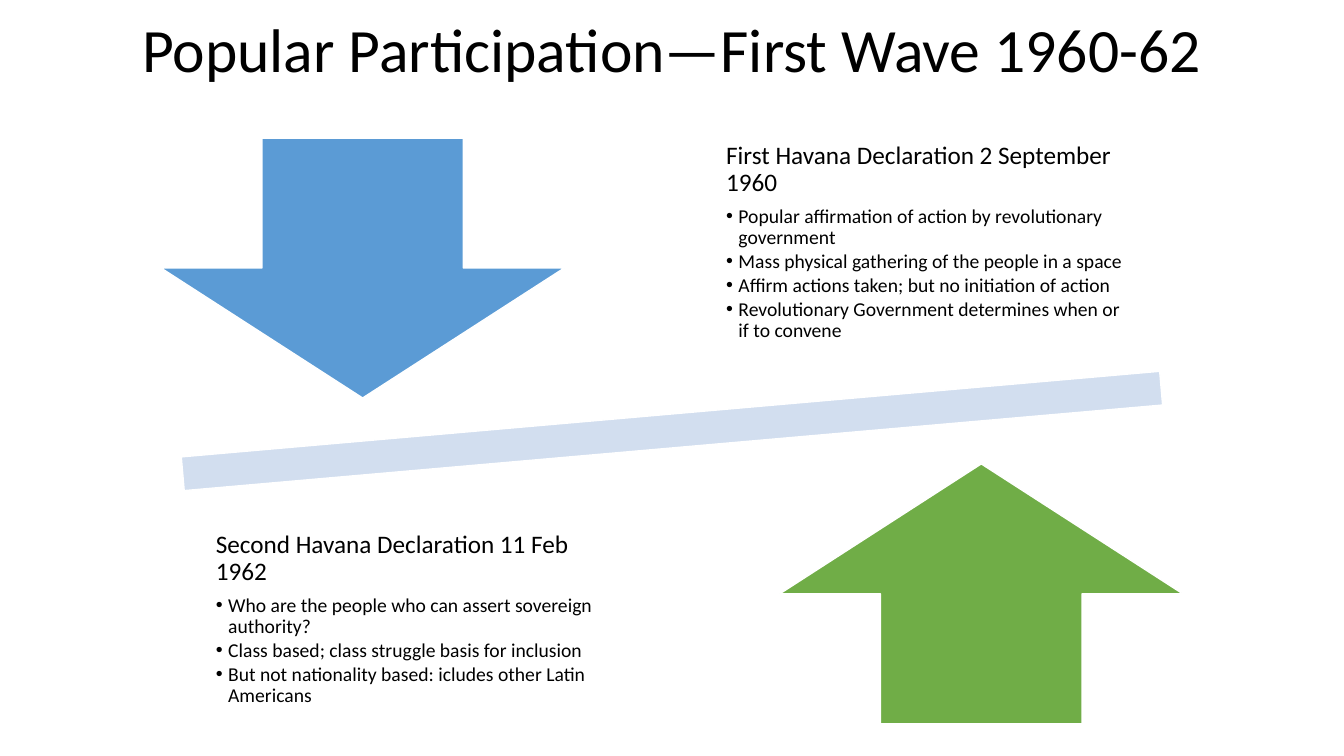
from lxml.etree import SubElement
from pptx import Presentation
from pptx.dml.color import RGBColor
from pptx.enum.shapes import MSO_SHAPE
from pptx.enum.text import MSO_ANCHOR, MSO_AUTO_SIZE, PP_ALIGN
from pptx.oxml.ns import qn
from pptx.util import Cm, Pt

SLIDE_WIDTH, SLIDE_HEIGHT = 33.87, 19.05
TITLE_HEIGHT = 2.67
ARROW_SIZE = (10.16, 6.55)
ARROW_MARGINS = (4.06, 0.81)
TEXT_SIZE = (10.85, 6.88)
TEXT_MARGIN = 5.08
BAR_SIZE = (33.68, 3.63)
BULLET_INDENT = 0.31

FIRST_DECLARATION = (
    "First Havana Declaration 2 September 1960",
    [
        "Popular affirmation of action by revolutionary government",
        "Mass physical gathering of the people in a space",
        "Affirm actions taken; but no initiation of action",
        "Revolutionary Government determines when or if to convene",
    ],
)
SECOND_DECLARATION = (
    "Second Havana Declaration 11 Feb 1962",
    [
        "Who are the people who can assert sovereign authority?",
        "Class based; class struggle basis for inclusion",
        "But not nationality based: icludes other Latin Americans",
    ],
)


def color(hex_string):
    return RGBColor.from_string(hex_string)


def place(shape, left, top, width, height):
    shape.left, shape.top = Cm(left), Cm(top)
    shape.width, shape.height = Cm(width), Cm(height)


def format_paragraph(paragraph, size, space_after=0):
    paragraph.line_spacing = 0.9
    paragraph.space_before = Pt(0)
    paragraph.space_after = Pt(space_after)
    paragraph.font.name = "Calibri"
    paragraph.font.size = Pt(size)
    paragraph.font.color.rgb = color("000000")


def set_bullet(paragraph, indent, character=None):
    """Set the hanging indent in cm and the bullet; no character means no bullet."""
    properties = paragraph._p.get_or_add_pPr()
    properties.set("marL", str(Cm(indent)))
    properties.set("indent", str(-Cm(indent)))
    if character:
        SubElement(properties, qn("a:buChar")).set("char", character)
    else:
        SubElement(properties, qn("a:buNone"))


def fill_title(title, left, top, width, height):
    place(title, left, top, width, height)
    frame = title.text_frame
    frame.text = "Popular Participation—First Wave 1960-62"
    frame.auto_size = MSO_AUTO_SIZE.NONE
    frame.vertical_anchor = MSO_ANCHOR.MIDDLE
    paragraph = frame.paragraphs[0]
    paragraph.alignment = PP_ALIGN.CENTER
    format_paragraph(paragraph, 44)


def fill_declaration(placeholder, declaration, left, top):
    place(placeholder, left, top, *TEXT_SIZE)
    heading, points = declaration
    frame = placeholder.text_frame
    frame.word_wrap = True
    frame.auto_size = MSO_AUTO_SIZE.NONE
    frame.vertical_anchor = MSO_ANCHOR.MIDDLE
    frame.margin_left = frame.margin_right = Cm(0.36)
    frame.margin_top = frame.margin_bottom = Cm(0.36)
    frame.text = heading
    set_bullet(frame.paragraphs[0], 0)
    format_paragraph(frame.paragraphs[0], 18, 6.3)
    for point in points:
        paragraph = frame.add_paragraph()
        paragraph.text = point
        paragraph.level = 1
        set_bullet(paragraph, BULLET_INDENT, "•")
        format_paragraph(paragraph, 14, 2.1)


def add_figure(slide, kind, fill, left, top, width, height):
    shape = slide.shapes.add_shape(kind, Cm(left), Cm(top), Cm(width), Cm(height))
    shape.shadow.inherit = False
    shape.fill.solid()
    shape.fill.fore_color.rgb = color(fill)
    shape.line.color.rgb = color("FFFFFF")
    shape.line.width = Pt(1)
    return shape


def build_balance(slide, left, top, width, height):
    """Tilted bar with an arrow and a declaration on each side, mirrored about the centre."""
    right, bottom = left + width, top + height
    bar_width, bar_height = BAR_SIZE
    bar = add_figure(slide, MSO_SHAPE.MATH_MINUS, "D2DEEF",
                     left + (width - bar_width) / 2, top + (height - bar_height) / 2,
                     *BAR_SIZE)
    bar.rotation = 355

    arrow_width, arrow_height = ARROW_SIZE
    side, edge = ARROW_MARGINS
    add_figure(slide, MSO_SHAPE.DOWN_ARROW, "5B9BD5",
               left + side, top + edge, *ARROW_SIZE)
    add_figure(slide, MSO_SHAPE.UP_ARROW, "70AD47",
               right - side - arrow_width, bottom - edge - arrow_height, *ARROW_SIZE)

    text_width, text_height = TEXT_SIZE
    fill_declaration(slide.placeholders[1], FIRST_DECLARATION,
                     right - TEXT_MARGIN - text_width, top)
    fill_declaration(slide.placeholders[2], SECOND_DECLARATION,
                     left + TEXT_MARGIN, bottom - text_height)


def main():
    presentation = Presentation()
    presentation.slide_width = Cm(SLIDE_WIDTH)
    presentation.slide_height = Cm(SLIDE_HEIGHT)
    two_content = presentation.slide_layouts[3]
    slide = presentation.slides.add_slide(two_content)
    fill_title(slide.shapes.title, 2.33, 0, 29.21, TITLE_HEIGHT)
    build_balance(slide, 0, TITLE_HEIGHT, SLIDE_WIDTH, SLIDE_HEIGHT - TITLE_HEIGHT)
    presentation.save("out.pptx")


if __name__ == "__main__":
    main()
